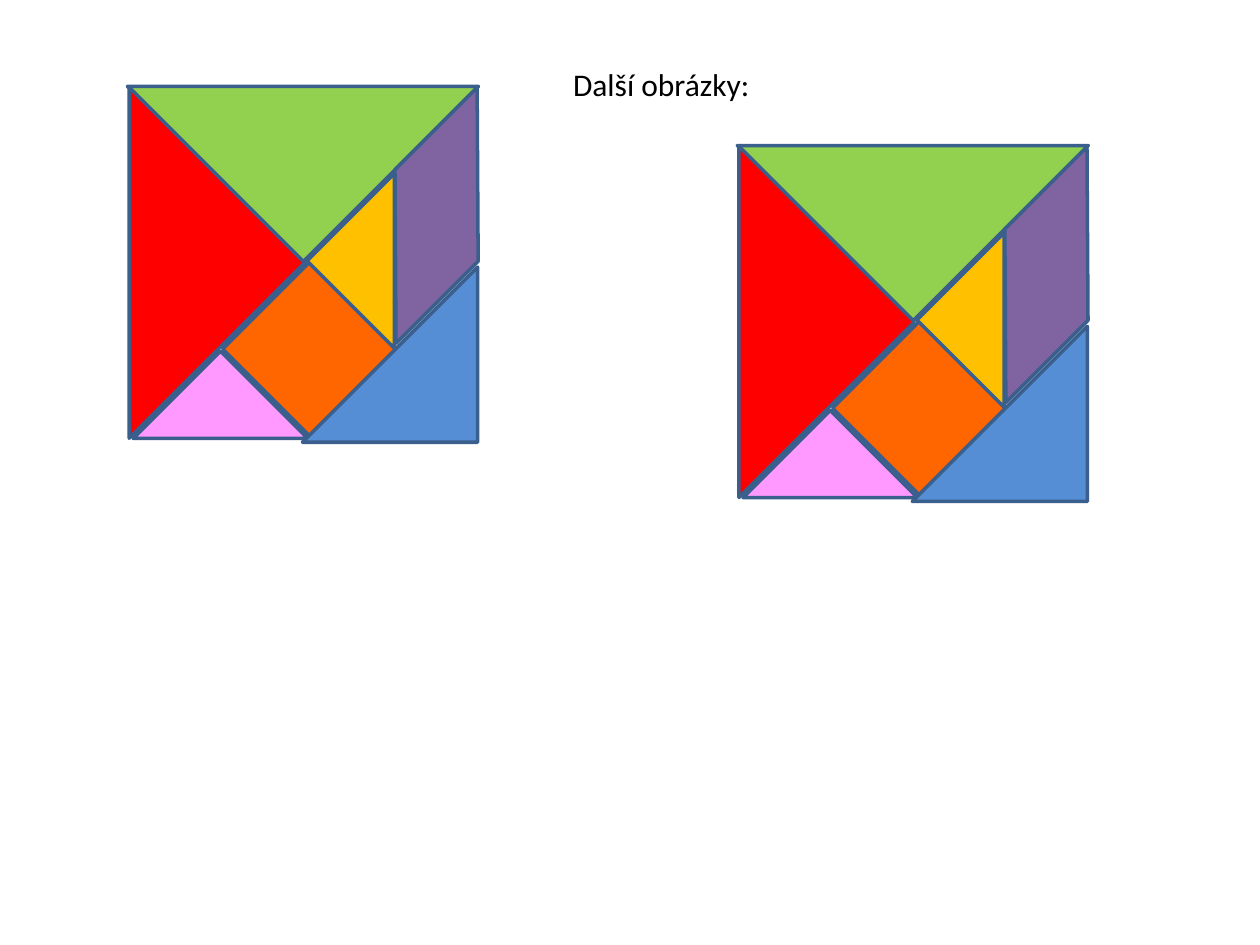
from dataclasses import dataclass

from pptx import Presentation
from pptx import util as u
from pptx.dml.color import RGBColor
from pptx.enum import shapes, text


@dataclass(frozen=True)
class Theme:
    font: str = "Calibri"
    text_size: int = 18
    text_color: str = "000000"
    outline: str = "3A5F8C"
    outline_width: int = 2
    green: str = "92D050"
    red: str = "FF0000"
    orange: str = "FF6600"
    pink: str = "FF99FF"
    yellow: str = "FFC000"
    purple: str = "8064A2"
    blue: str = "558ED5"


THEME = Theme()
TRIANGLE = shapes.MSO_SHAPE.RIGHT_TRIANGLE
SQUARE = shapes.MSO_SHAPE.RECTANGLE
PARALLELOGRAM = shapes.MSO_SHAPE.PARALLELOGRAM

# Leg lengths of the large, medium and small pieces
LARGE, MEDIUM, SMALL = 1.97, 1.39, 0.98

# Kind, left, top, width, height, rotation, fill; relative to the tangram's corner
PIECES = [
    (TRIANGLE, 0.40, -0.99, LARGE, LARGE, 315, THEME.green),
    (TRIANGLE, -0.98, 0.41, LARGE, LARGE, 225, THEME.red),
    (SQUARE, 0.95, 1.59, SMALL, SMALL, 45, THEME.orange),
    (TRIANGLE, 0.24, 2.30, SMALL, SMALL, 135, THEME.pink),
    (TRIANGLE, 1.62, 0.89, SMALL, SMALL, 45, THEME.yellow),
    (PARALLELOGRAM, 1.50, 0.53, 1.89, SMALL, 135, THEME.purple),
    (TRIANGLE, 1.38, 1.43, MEDIUM, MEDIUM, 270, THEME.blue),
]


def add_piece(slide, kind, left, top, width, height, rotation, fill):
    shape = slide.shapes.add_shape(
        kind, u.Inches(left), u.Inches(top), u.Inches(width), u.Inches(height))
    if kind == PARALLELOGRAM:
        shape.adjustments[0] = 0.988
    shape.rotation = rotation
    shape.shadow.inherit = False
    shape.fill.solid()
    shape.fill.fore_color.rgb = RGBColor.from_string(fill)
    shape.line.color.rgb = RGBColor.from_string(THEME.outline)
    shape.line.width = u.Pt(THEME.outline_width)


def add_tangram(slide, left, top):
    for kind, piece_left, piece_top, *rest in PIECES:
        add_piece(slide, kind, left + piece_left, top + piece_top, *rest)


def add_heading(slide, wording, left, top, width, height):
    box = slide.shapes.add_textbox(
        u.Inches(left), u.Inches(top), u.Inches(width), u.Inches(height))
    frame = box.text_frame
    frame.word_wrap = True
    frame.auto_size = text.MSO_AUTO_SIZE.SHAPE_TO_FIT_TEXT
    paragraph = frame.paragraphs[0]
    paragraph.text = wording
    paragraph.font.name = THEME.font
    paragraph.font.size = u.Pt(THEME.text_size)
    paragraph.font.color.rgb = RGBColor.from_string(THEME.text_color)


def main():
    presentation = Presentation()
    presentation.slide_width = u.Inches(10)
    presentation.slide_height = u.Inches(7.5)
    slide = presentation.slides.add_slide(presentation.slide_layouts[6])

    # Left tangram, heading, right tangram
    add_tangram(slide, 1.02, 0.69)
    add_heading(slide, "Další obrázky:", 4.45, 0.47, 3.36, 0.4)
    add_tangram(slide, 5.86, 1.16)

    presentation.save("out.pptx")


if __name__ == "__main__":
    main()
